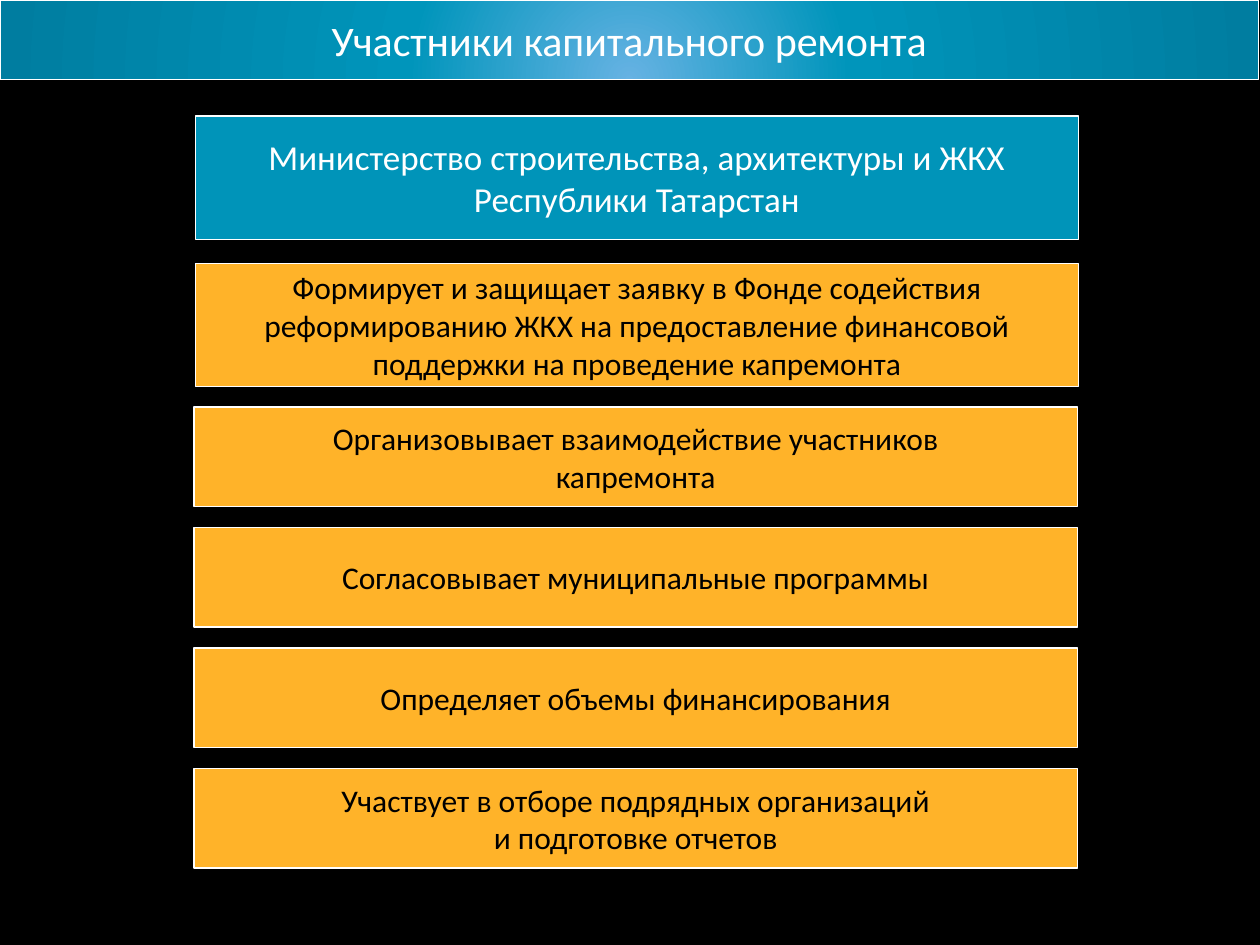
"""Build the slide on the participants of capital repairs."""
from lxml import etree
from pptx import Presentation, util as u
from pptx.dml.color import RGBColor
from pptx.enum import shapes, text
from pptx.oxml import ns

BLACK = RGBColor(0x00, 0x00, 0x00)
WHITE = RGBColor(0xFF, 0xFF, 0xFF)
TEAL = RGBColor(0x00, 0x94, 0xB9)
AMBER = RGBColor(0xFF, 0xB3, 0x29)
GLOW = [(0, RGBColor(0x66, 0xB2, 0xE3)),
        (35, RGBColor(0x00, 0x95, 0xBB)),
        (100, RGBColor(0x00, 0x7D, 0xA0))]

BOX_WIDTH = 7.01
TALL, SHORT = 0.98, 0.79
TALL_LEFT, TALL_TOP, TALL_PITCH = 1.55, 0.92, 1.17
SHORT_LEFT, SHORT_TOP, SHORT_LAST = 1.54, 3.23, 6.1

MINISTRY = ["Министерство строительства, архитектуры и ЖКХ Республики Татарстан"]
APPLICATION = ["Формирует и защищает заявку в Фонде содействия реформированию ЖКХ "
               "на предоставление финансовой поддержки на проведение капремонта"]
DUTIES = [
    ["Организовывает взаимодействие участников", "капремонта"],
    ["Согласовывает муниципальные программы"],
    ["Определяет объемы финансирования"],
    ["Участвует в отборе подрядных организаций", "и подготовке отчетов"],
]


def place(sp, left, top, width, height):
    """Set the position and size of a shape in inches."""
    frame = {"left": left, "top": top, "width": width, "height": height}
    for name, value in frame.items():
        setattr(sp, name, u.Inches(value))


def write(sp, lines, size, color):
    """Fill a shape with centred paragraphs."""
    tf = sp.text_frame
    tf.word_wrap = True
    tf.auto_size = text.MSO_AUTO_SIZE.NONE
    tf.vertical_anchor = text.MSO_ANCHOR.MIDDLE
    for i, line in enumerate(lines):
        p = tf.add_paragraph() if i else tf.paragraphs[0]
        p.alignment = text.PP_ALIGN.CENTER
        r = p.add_run()
        r.text = line
        for name, value in {"name": "Calibri", "size": u.Pt(size)}.items():
            setattr(r.font, name, value)
        r.font.color.rgb = color


def outline(sp):
    """Give a shape its thin white border."""
    sp.line.color.rgb = WHITE
    sp.line.width = u.Pt(0.75)


def radial_fill(sp, stops):
    """Fill a shape with a glow that spreads from its bottom centre."""
    sp.fill.gradient()
    grad = sp._element.spPr.find(ns.qn("a:gradFill"))
    for child in list(grad):
        grad.remove(child)
    stop_list = etree.SubElement(grad, ns.qn("a:gsLst"))
    for share, color in stops:
        stop = etree.SubElement(stop_list, ns.qn("a:gs"), pos=str(share * 1000))
        etree.SubElement(stop, ns.qn("a:srgbClr"), val=str(color))
    glow = etree.SubElement(grad, ns.qn("a:path"), path="circle")
    etree.SubElement(glow, ns.qn("a:fillToRect"),
                     l="50000", t="100000", r="50000", b="0")


def add_title(s, title):
    """Turn the title placeholder into the banner across the top."""
    sp = s.shapes.title
    place(sp, 0, 0, 9.99, 0.63)
    radial_fill(sp, GLOW)
    outline(sp)
    write(sp, [title], 24, WHITE)


def add_box(s, frame, lines, fill, size, color):
    """Add a bordered rectangle with centred text."""
    sp = s.shapes.add_shape(shapes.MSO_SHAPE.RECTANGLE, *map(u.Inches, frame))
    sp.shadow.inherit = False
    sp.fill.solid()
    sp.fill.fore_color.rgb = fill
    outline(sp)
    write(sp, lines, size, color)


def main():
    """Build and save the slide."""
    prs = Presentation()
    prs.slide_width, prs.slide_height = u.Inches(10), u.Inches(7.5)
    s = prs.slides.add_slide(prs.slide_layouts[5])
    s.background.fill.solid()
    s.background.fill.fore_color.rgb = BLACK

    add_title(s, "Участники капитального ремонта")
    add_box(s, (TALL_LEFT, TALL_TOP, BOX_WIDTH, TALL), MINISTRY, TEAL, 20, WHITE)
    add_box(s, (TALL_LEFT, TALL_TOP + TALL_PITCH, BOX_WIDTH, TALL),
            APPLICATION, AMBER, 18, BLACK)
    pitch = (SHORT_LAST - SHORT_TOP) / (len(DUTIES) - 1)
    for i, duty in enumerate(DUTIES):
        add_box(s, (SHORT_LEFT, SHORT_TOP + i * pitch, BOX_WIDTH, SHORT),
                duty, AMBER, 18, BLACK)
    prs.save("out.pptx")


if __name__ == "__main__":
    main()
